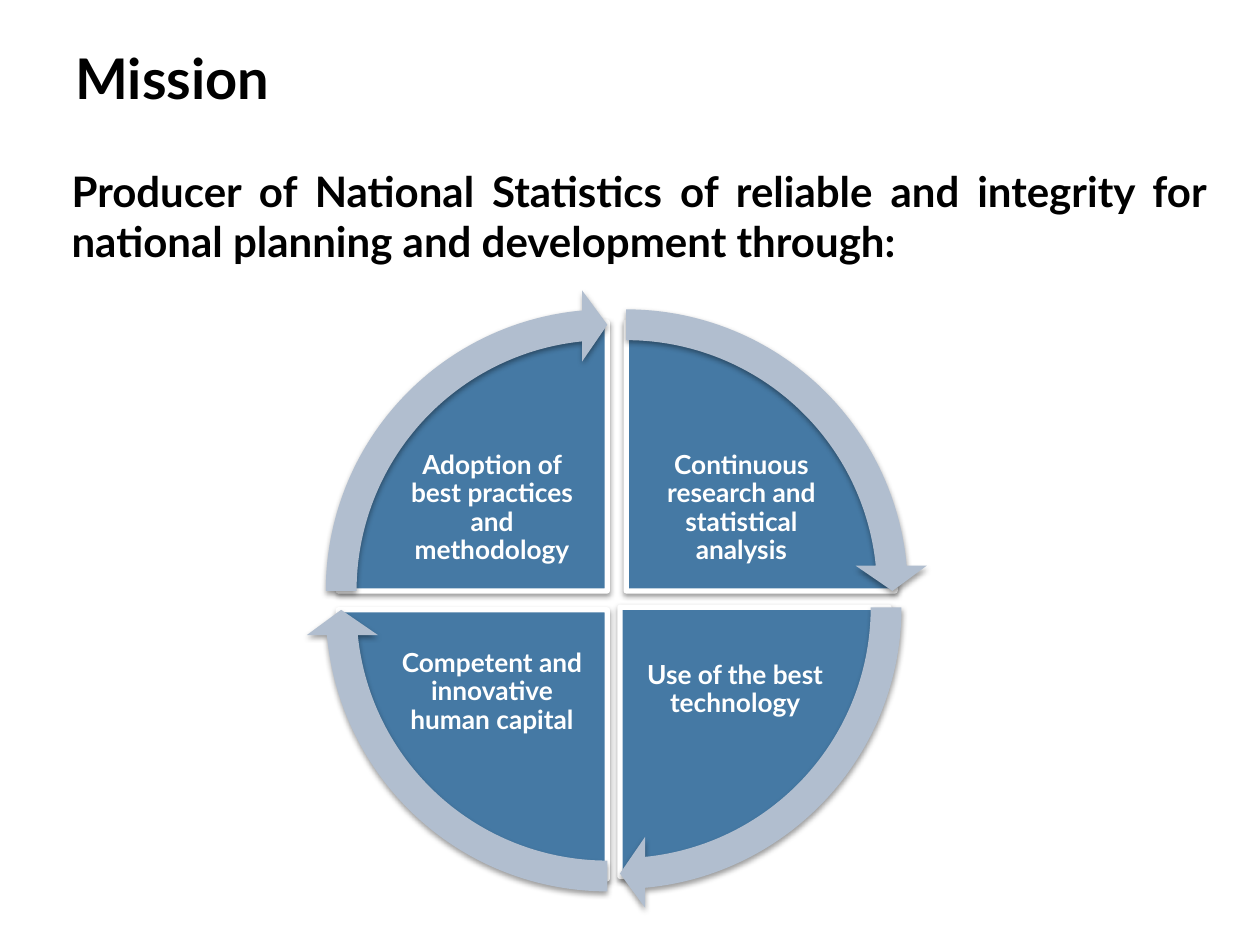
from dataclasses import dataclass

from lxml import etree
from pptx import Presentation
from pptx.dml.color import RGBColor
from pptx.enum.shapes import MSO_SHAPE
from pptx.enum.text import MSO_ANCHOR, PP_ALIGN
from pptx.oxml.ns import qn
from pptx.util import Inches, Pt

PIE, ARROW = MSO_SHAPE.PIE, MSO_SHAPE.CIRCULAR_ARROW
MIDDLE = MSO_ANCHOR.MIDDLE
LEFT, CENTER, JUSTIFY = PP_ALIGN.LEFT, PP_ALIGN.CENTER, PP_ALIGN.JUSTIFY

COLUMNS, ROWS = 100, 75
CELL = Inches(0.1)
FULL_TURN = 216
QUARTER = FULL_TURN / 4

PIE_SIZE, ARROW_SIZE = 42.7, 47.9
LABEL_WIDTH, LABEL_HEIGHT = 15.7, 11.7
LABEL_GAP_X, LABEL_GAP_Y = 1.3, 0.7
ARROW_BAND, ARROW_TIP, ARROW_SWEEP, ARROW_HEAD = 0.051, 3.275, 50.725, 0.059


@dataclass(frozen=True)
class Theme:
    font: str = "Lato"
    ink: str = "000000"
    paper: str = "FFFFFF"
    quadrant: str = "4579A4"
    cycle: str = "B1BECF"
    heading_size: int = 32
    statement_size: int = 24
    label_size: int = 15
    outline: int = 3


THEME = Theme()

QUADRANTS = [
    ("Continuous research and statistical analysis", 49.7, 46.9, 1, -1),
    ("Use of the best technology", 49.2, 48.2, 1, 1),
    ("Competent and innovative human capital", 48.2, 48.4, -1, 1),
    ("Adoption of best practices and methodology", 48.2, 46.9, -1, -1),
]


def grid(*cells):
    return [round(cell * CELL) for cell in cells]


def add_text(shapes, text, area, *, size, color=THEME.ink, align=LEFT,
             line_spacing=1.0, inset=None):
    box = shapes.add_textbox(*grid(*area))
    frame = box.text_frame
    frame.word_wrap = True
    frame.vertical_anchor = MIDDLE
    if inset is not None:
        frame.margin_left = frame.margin_right = Inches(inset)
        frame.margin_top = frame.margin_bottom = Inches(inset)
    paragraph = frame.paragraphs[0]
    paragraph.alignment = align
    paragraph.line_spacing = line_spacing
    run = paragraph.add_run()
    run.text = text
    run.font.name = THEME.font
    run.font.size = Pt(size)
    run.font.bold = True
    run.font.color.rgb = RGBColor.from_string(color)


def add_shadow(shape):
    shape.shadow.inherit = False
    effects = shape._element.spPr.find(qn("a:effectLst"))
    shadow = etree.SubElement(effects, qn("a:outerShdw"), blurRad="40000",
                              dist="20000", dir="5400000", rotWithShape="0")
    tint = etree.SubElement(shadow, qn("a:srgbClr"), val=THEME.ink)
    etree.SubElement(tint, qn("a:alpha"), val="38000")


def add_round(shapes, preset, center, size, angles, fill, outline=None):
    left, top = (middle - size / 2 for middle in center)
    shape = shapes.add_shape(preset, *grid(left, top, size, size))
    for index, value in enumerate(angles):
        shape.adjustments[index] = value
    shape.fill.solid()
    shape.fill.fore_color.rgb = RGBColor.from_string(fill)
    if outline:
        shape.line.color.rgb = RGBColor.from_string(outline)
        shape.line.width = Pt(THEME.outline)
    else:
        shape.line.fill.background()
    add_shadow(shape)


def add_quadrant(shapes, label, center, start, side_x, side_y):
    end = (start + QUARTER) % FULL_TURN
    add_round(shapes, PIE, center, PIE_SIZE, (start, end),
              THEME.quadrant, THEME.paper)
    label_x = center[0] + side_x * (LABEL_GAP_X + LABEL_WIDTH / 2)
    label_y = center[1] + side_y * (LABEL_GAP_Y + LABEL_HEIGHT / 2)
    area = (label_x - LABEL_WIDTH / 2, label_y - LABEL_HEIGHT / 2,
            LABEL_WIDTH, LABEL_HEIGHT)
    add_text(shapes, label, area, size=THEME.label_size, color=THEME.paper,
             align=CENTER, line_spacing=0.9, inset=0.02)


def add_cycle_arrow(shapes, center, start):
    angles = (ARROW_BAND, ARROW_TIP, start + ARROW_SWEEP, start, ARROW_HEAD)
    add_round(shapes, ARROW, center, ARROW_SIZE, angles, THEME.cycle)


def add_cycle(slide):
    shapes = slide.shapes.add_group_shape().shapes
    starts = [(turn + 3) % 4 * QUARTER for turn in range(len(QUADRANTS))]
    for start, (label, x, y, side_x, side_y) in zip(starts, QUADRANTS):
        add_quadrant(shapes, label, (x, y), start, side_x, side_y)
    for start, (_, x, y, _, _) in zip(starts, QUADRANTS):
        add_cycle_arrow(shapes, (x, y), start)


def main():
    presentation = Presentation()
    presentation.slide_width, presentation.slide_height = grid(COLUMNS, ROWS)
    slide = presentation.slides.add_slide(presentation.slide_layouts[6])
    add_text(slide.shapes,
             "Producer of National Statistics of reliable and integrity for "
             "national planning and development through:",
             (4.7, 10, 92, 14.2), size=THEME.statement_size, align=JUSTIFY)
    add_cycle(slide)
    add_text(slide.shapes, "Mission", (5, 3.2, 92, 5.8),
             size=THEME.heading_size)
    presentation.save("out.pptx")


if __name__ == "__main__":
    main()
